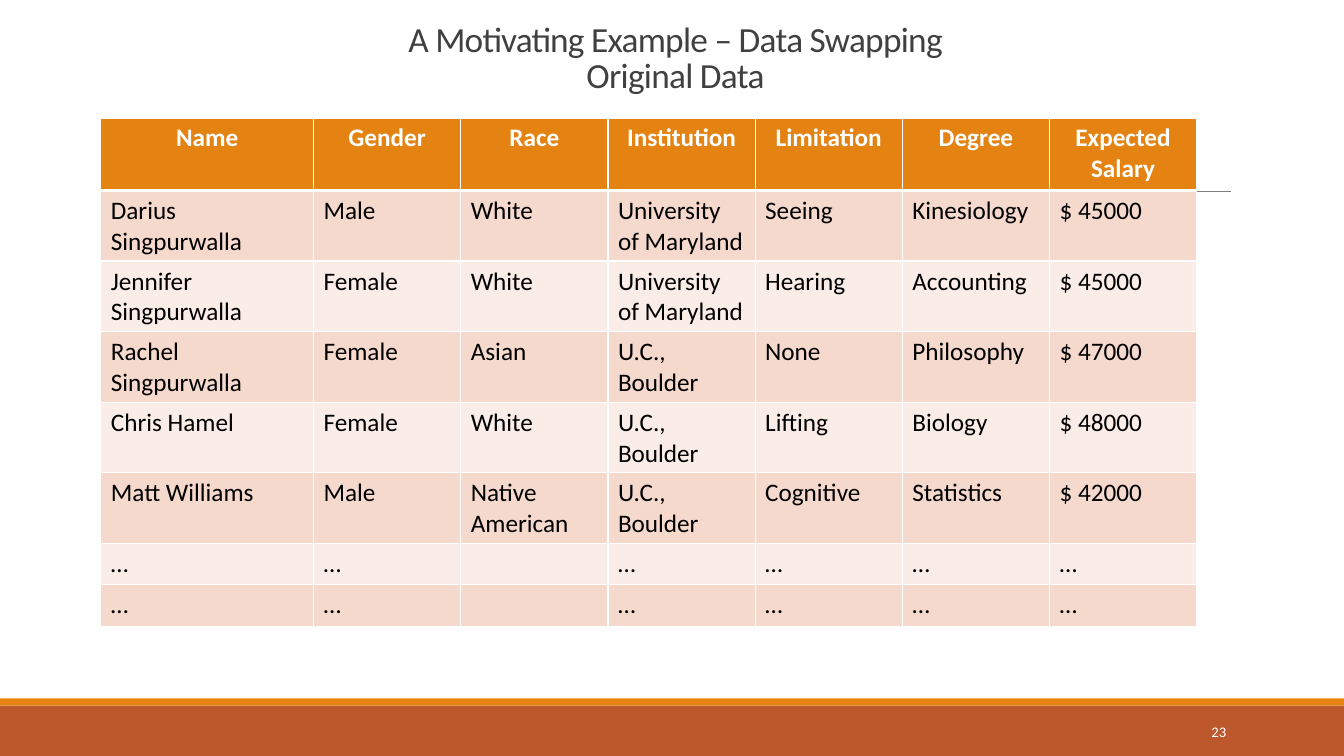
from dataclasses import dataclass, field

from lxml import etree
from pptx import Presentation
from pptx import util as u
from pptx.dml import color
from pptx.enum import shapes, text
from pptx.oxml import ns

COLORS = {
    "footer": "BD582C", "accent": "E48312", "rule": "808080", "title": "404040",
    "white": "FFFFFF", "black": "000000", "odd": "F5D9CC", "even": "FAEDE7",
}
FONT = "Calibri"
HEADERS = ("Name", "Gender", "Race", "Institution", "Limitation", "Degree", "Expected Salary")
PEOPLE = (
    ("Darius Singpurwalla", "Male", "White", "University of Maryland", "Seeing", "Kinesiology", "$ 45000"),
    ("Jennifer Singpurwalla", "Female", "White", "University of Maryland", "Hearing", "Accounting", "$ 45000"),
    ("Rachel Singpurwalla", "Female", "Asian", "U.C., Boulder", "None", "Philosophy", "$ 47000"),
    ("Chris Hamel", "Female", "White", "U.C., Boulder", "Lifting", "Biology", "$ 48000"),
    ("Matt Williams", "Male", "Native American", "U.C., Boulder", "Cognitive", "Statistics", "$ 42000"),
) + (("…", "…", "", "…", "…", "…", "…"),) * 2


@dataclass(frozen=True)
class Band:
    """A full-width strip at the foot of the slide."""
    top: float
    height: float
    fill: str


@dataclass(frozen=True)
class Label:
    """A line of text with its box and format."""
    words: str
    box: tuple[float, float, float, float]
    size: float
    ink: str
    anchor: text.MSO_ANCHOR
    paragraph: dict = field(default_factory=dict)
    tracking: int = 0


BANDS = (Band(7, 0.5, "footer"), Band(6.93, 0.07, "accent"))
LABELS = (
    Label("A Motivating Example – Data Swapping\vOriginal Data", (1.2, 0.31, 11, 0.69), 25.2, "title",
          text.MSO_ANCHOR.BOTTOM, {"alignment": text.PP_ALIGN.CENTER, "line_spacing": 0.85}, -50),
    Label("23", (10.83, 7.06, 1.43, 0.4), 10.5, "white",
          text.MSO_ANCHOR.MIDDLE, {"alignment": text.PP_ALIGN.RIGHT}),
)


def rgb(name: str) -> color.RGBColor:
    """Look up a named colour."""
    return color.RGBColor.from_string(COLORS[name])


def apply(target, values: dict) -> None:
    """Set every attribute in a dict of format values."""
    for attribute, value in values.items():
        setattr(target, attribute, value)


def format_runs(paragraph, size: float, ink: str, bold: bool = False, tracking: int = 0) -> None:
    """Give all runs of a paragraph one font."""
    for run in paragraph.runs:
        apply(run.font, {"name": FONT, "size": u.Pt(size), "bold": bold})
        run.font.color.rgb = rgb(ink)
        if tracking:
            run._r.get_or_add_rPr().set("spc", str(tracking))


def draw_band(slide, band: Band) -> None:
    """Draw a footer strip."""
    strip = slide.shapes.add_shape(shapes.MSO_SHAPE.RECTANGLE, 0, u.Inches(band.top),
                                   u.Inches(13.33), u.Inches(band.height))
    strip.shadow.inherit = False
    strip.fill.solid()
    strip.fill.fore_color.rgb = rgb(band.fill)
    strip.line.fill.background()


def draw_rule(slide) -> None:
    """Draw the thin rule behind the table."""
    rule = slide.shapes.add_connector(shapes.MSO_CONNECTOR.STRAIGHT, u.Inches(1.31), u.Inches(1.9),
                                      u.Inches(12.21), u.Inches(1.9))
    rule.line.color.rgb = rgb("rule")
    rule.line.width = u.Pt(0.5)
    etree.SubElement(rule._element.spPr, ns.qn("a:effectLst"))


def draw_label(slide, label: Label) -> None:
    """Draw a text box."""
    frame = slide.shapes.add_textbox(*map(u.Inches, label.box)).text_frame
    apply(frame, {"word_wrap": True, "vertical_anchor": label.anchor, "text": label.words})
    apply(frame.paragraphs[0], label.paragraph)
    format_runs(frame.paragraphs[0], label.size, label.ink, tracking=label.tracking)


def draw_borders(cell, widths: dict[str, float]) -> None:
    """Add white lines of the given point widths around a cell."""
    properties = cell._tc.get_or_add_tcPr()
    for side, width in widths.items():
        line = etree.SubElement(properties, ns.qn(f"a:ln{side}"), w=str(u.Pt(width)))
        solid = etree.SubElement(line, ns.qn("a:solidFill"))
        etree.SubElement(solid, ns.qn("a:srgbClr"), val=COLORS["white"])


def draw_table(slide) -> None:
    """Draw the table of people under its header row."""
    records = (HEADERS, *PEOPLE)
    table = slide.shapes.add_table(len(records), len(HEADERS), u.Inches(1), u.Inches(1.17),
                                   u.Inches(10.87), u.Inches(3.59)).table
    for index, column in enumerate(table.columns):
        column.width = u.Inches(1.46 if index else 2.11)
    for index, (row, record) in enumerate(zip(table.rows, records)):
        header = index == 0
        row.height = u.Inches(0.72 if header else 0.41)
        fill = "accent" if header else "odd" if index % 2 else "even"
        widths = {"L": 1, "R": 1, "T": 3 if index == 1 else 1, "B": 3 if header else 1}
        for cell, words in zip(row.cells, record):
            cell.text = words
            draw_borders(cell, widths)
            cell.fill.solid()
            cell.fill.fore_color.rgb = rgb(fill)
            paragraph = cell.text_frame.paragraphs[0]
            paragraph.alignment = text.PP_ALIGN.CENTER if header else text.PP_ALIGN.LEFT
            format_runs(paragraph, 18, "white" if header else "black", header)


def main() -> None:
    """Build and save the slide."""
    deck = Presentation()
    apply(deck, {"slide_width": u.Inches(13.33), "slide_height": u.Inches(7.5)})
    slide = deck.slides.add_slide(deck.slide_layouts[6])
    for band in BANDS:
        draw_band(slide, band)
    draw_rule(slide)
    for label in LABELS:
        draw_label(slide, label)
    draw_table(slide)
    deck.save("out.pptx")


if __name__ == "__main__":
    main()
